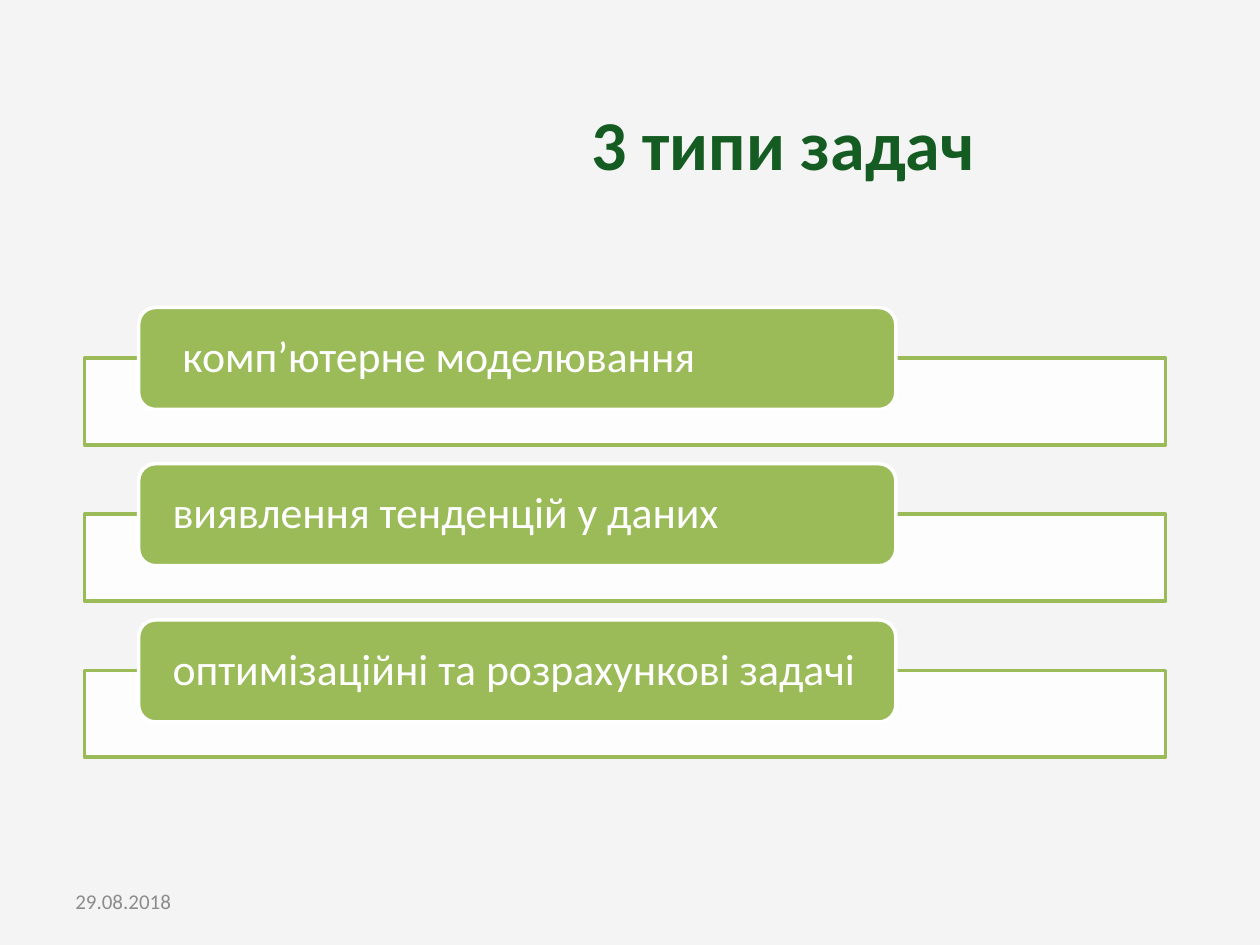
"""Build the slide that lists three types of tasks."""
import pptx
import pptx.dml.color
import pptx.enum.shapes
import pptx.enum.text
import pptx.util

Inches = pptx.util.Inches
RGBColor = pptx.dml.color.RGBColor
MSO_SHAPE = pptx.enum.shapes.MSO_SHAPE
PP_ALIGN = pptx.enum.text.PP_ALIGN

BACKGROUND = RGBColor(0xF4, 0xF4, 0xF4)
BAR_FILL = RGBColor(0xFD, 0xFD, 0xFD)
WHITE = RGBColor(0xFF, 0xFF, 0xFF)
GREEN = RGBColor(0x9B, 0xBB, 0x59)
DARK_GREEN = RGBColor(0x14, 0x5C, 0x22)
GREY = RGBColor(0x8C, 0x8C, 0x8C)

TASKS = [
    " комп’ютерне моделювання",
    "виявлення тенденцій у даних",
    "оптимізаційні та розрахункові задачі",
]
FIRST_TOP = 2.44
ROW_STEP = 1.24
BAR_OFFSET = 0.4


def write_text(shape, text, *, size, color, bold=False, align=PP_ALIGN.LEFT,
               side_inset=0.1, line_spacing=None):
    frame = shape.text_frame
    frame.word_wrap = True
    frame.vertical_anchor = pptx.enum.text.MSO_ANCHOR.MIDDLE
    frame.margin_left = frame.margin_right = Inches(side_inset)
    paragraph = frame.paragraphs[0]
    paragraph.alignment = align
    paragraph.line_spacing = line_spacing
    run = paragraph.add_run()
    run.text = text
    run.font.name = "Calibri"
    run.font.size = pptx.util.Pt(size)
    run.font.bold = bold
    run.font.color.rgb = color


def add_text(slide, text, left, top, width, height, **style):
    box = slide.shapes.add_textbox(
        Inches(left), Inches(top), Inches(width), Inches(height))
    write_text(box, text, **style)


def add_panel(slide, kind, left, top, width, height, fill, outline):
    panel = slide.shapes.add_shape(
        kind, Inches(left), Inches(top), Inches(width), Inches(height))
    panel.shadow.inherit = False
    panel.fill.solid()
    panel.fill.fore_color.rgb = fill
    panel.line.color.rgb = outline
    panel.line.width = pptx.util.Pt(2)
    return panel


def add_task(slide, task, top):
    add_panel(slide, MSO_SHAPE.RECTANGLE, 0.67, top + BAR_OFFSET, 8.58, 0.69,
              BAR_FILL, GREEN)
    label = add_panel(slide, MSO_SHAPE.ROUNDED_RECTANGLE, 1.1, top, 6.01, 0.81,
                      GREEN, WHITE)
    write_text(label, task, size=25, color=WHITE, side_inset=0.23,
               line_spacing=0.9)


def main():
    deck = pptx.Presentation()
    deck.slide_width = Inches(10)
    deck.slide_height = Inches(7.5)
    slide = deck.slides.add_slide(deck.slide_layouts[6])
    slide.background.fill.solid()
    slide.background.fill.fore_color.rgb = BACKGROUND

    add_text(slide, "3 типи задач", 3.5, 0, 5.43, 2.26, size=40,
             color=DARK_GREEN, bold=True, align=PP_ALIGN.CENTER)
    add_text(slide, "29.08.2018", 0.5, 6.95, 2.33, 0.4, size=12, color=GREY)
    for row, task in enumerate(TASKS):
        add_task(slide, task, FIRST_TOP + row * ROW_STEP)
    deck.save("out.pptx")


if __name__ == "__main__":
    main()
